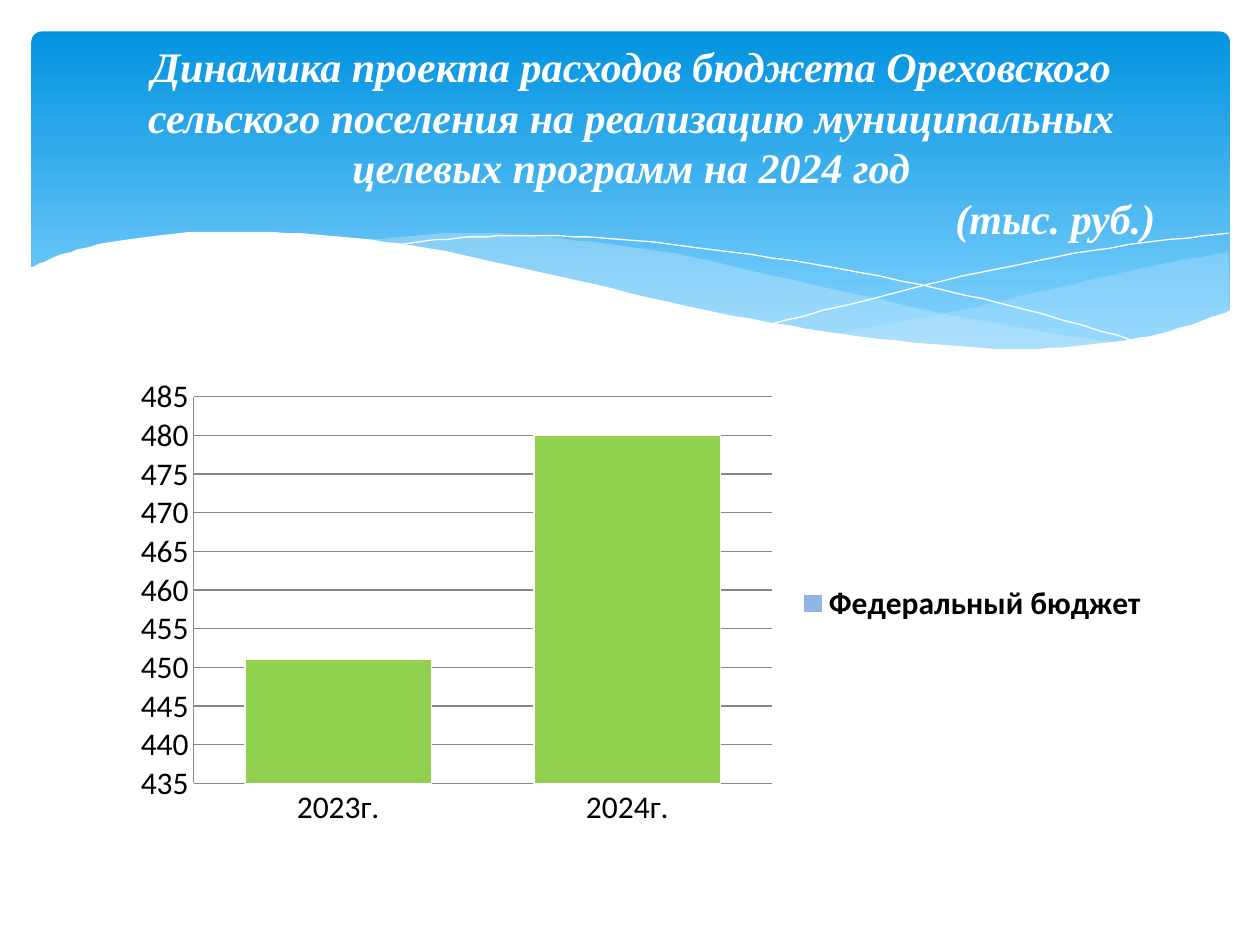
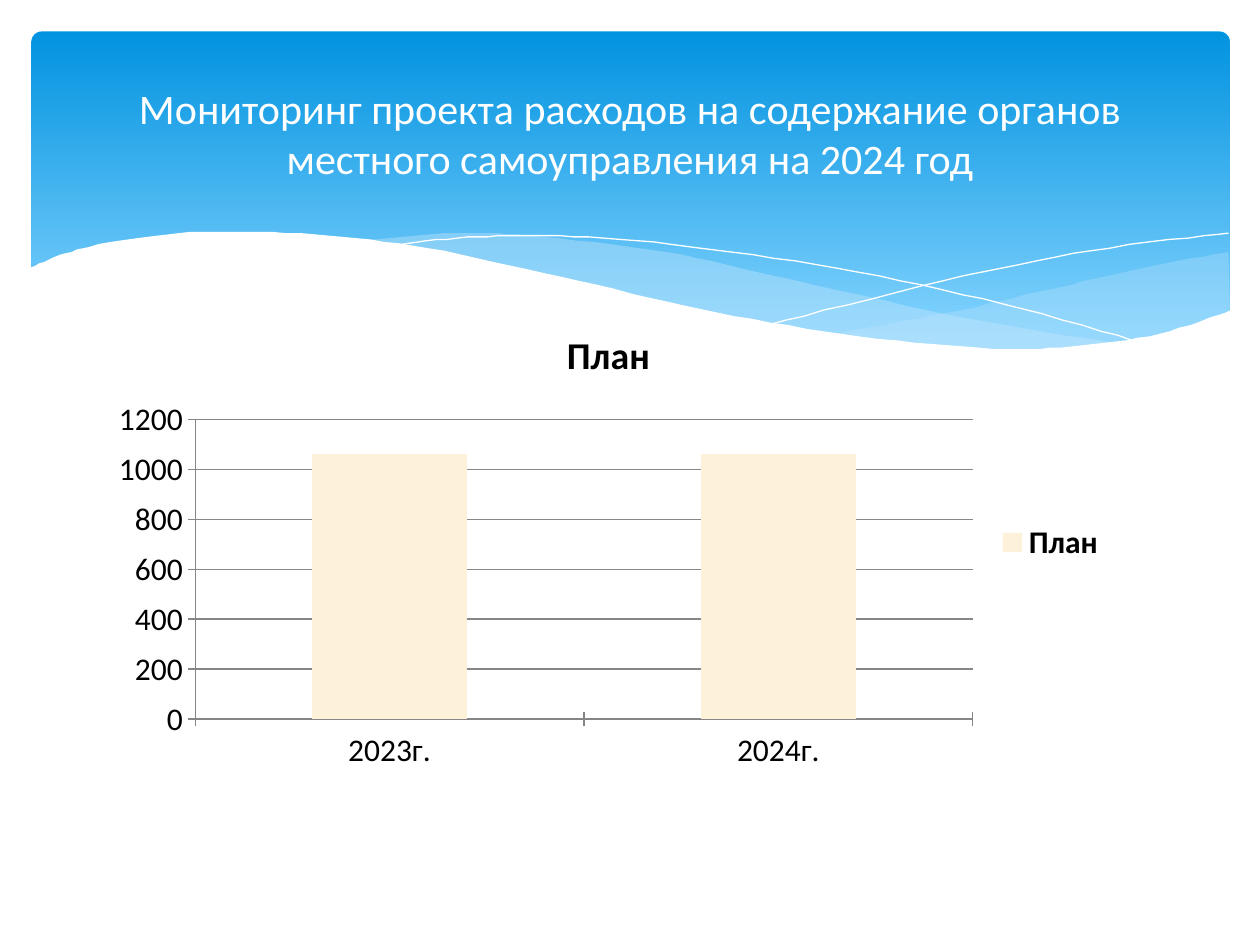
from dataclasses import dataclass
from typing import Optional

from lxml import etree
from pptx import Presentation
from pptx.chart.data import CategoryChartData
from pptx.dml.color import RGBColor
from pptx.enum.chart import XL_CHART_TYPE, XL_LEGEND_POSITION, XL_TICK_MARK
from pptx.enum.shapes import MSO_SHAPE
from pptx.enum.text import MSO_ANCHOR, PP_ALIGN
from pptx.oxml.ns import qn
from pptx.util import Pt

PX = 9144  # EMU per px, 100 px to the inch
STACKED, CLUSTERED = XL_CHART_TYPE.COLUMN_STACKED, XL_CHART_TYPE.COLUMN_CLUSTERED
NO_TICK, CROSS_TICK = XL_TICK_MARK.NONE, XL_TICK_MARK.CROSS
LEGEND_RIGHT = XL_LEGEND_POSITION.RIGHT
ROUNDED = MSO_SHAPE.ROUNDED_RECTANGLE
MIDDLE = MSO_ANCHOR.MIDDLE
CENTER, RIGHT = PP_ALIGN.CENTER, PP_ALIGN.RIGHT
CURVE_STEPS = 8  # straight pieces between two knots of a wave

COLORS = {
    "white": "FFFFFF", "black": "000000", "grid": "868686",
    "band_top": "0293E0", "band_bottom": "83D3FE", "wave": "C6E7FC",
    "green": "92D050", "cyan": "00B0F0", "blue": "8FB5E5", "cream": "FDF2D9",
}
BODY_FONT, SERIF_FONT = "Calibri", "Times New Roman"

Box = tuple[int, int, int, int]
Knots = tuple[tuple[int, int], ...]


@dataclass(frozen=True)
class Wave:
    edges: tuple[Knots, ...]  # each edge is smooth, corners lie between edges
    opacity: Optional[int] = None  # percent; None means a bare white line


@dataclass(frozen=True)
class Title:
    box: Box
    lines: tuple[tuple[str, PP_ALIGN], ...]
    font: str
    emphasis: bool = False


@dataclass(frozen=True)
class Series:
    name: str
    values: tuple[int, ...]
    color: str


@dataclass(frozen=True)
class BudgetChart:
    kind: XL_CHART_TYPE
    box: Box
    plot: Box
    series: tuple[Series, ...]
    scale: tuple[int, int, int]  # minimum, maximum, step
    gap: int
    tick: XL_TICK_MARK
    heading: str = ""
    outline: bool = False
    hidden_in_legend: tuple[int, ...] = ()


# Waves along the lower edge of the band, from back to front
WAVES = (
    Wave((((975, 200), (906, 213), (832, 230), (753, 248), (661, 265)),
          ((661, 265), (745, 275), (814, 278), (889, 272), (942, 259), (976, 247))),
         29),
    Wave((((893, 273), (775, 254), (629, 222), (528, 200), (420, 187), (361, 185),
           (286, 191)),
          ((286, 191), (383, 207), (491, 232), (618, 258), (722, 274), (796, 278),
           (893, 273))),
         40),
    Wave((((309, 195), (363, 189), (433, 187), (533, 194), (665, 213), (795, 241),
           (907, 272)),)),
    Wave((((613, 257), (748, 223), (866, 199), (975, 185)),)),
    Wave((((977, 246), (920, 265), (850, 275), (778, 276), (668, 265), (555, 245),
           (447, 220), (340, 197), (250, 186), (161, 184), (95, 191), (52, 201),
           (23, 213)),
          ((23, 329), (977, 329))),
         100),
)

YEARS = ("2023г.", "2024г.")

SLIDES = (
    (
        BudgetChart(
            STACKED, (95, 293, 827, 372), (154, 315, 459, 307),
            (Series("Series 1", (451, 480), "green"),
             Series("Series 2", (0, 0), "cyan"),
             Series("Федеральный бюджет", (0, 0), "blue")),
            (435, 485, 5), 55, NO_TICK, outline=True, hidden_in_legend=(0, 1)),
        Title(
            (51, 36, 900, 153),
            (("Динамика проекта расходов бюджета Ореховского сельского поселения "
              "на реализацию муниципальных целевых программ на 2024 год", CENTER),
             ("(тыс. руб.)", RIGHT)),
            SERIF_FONT, emphasis=True),
    ),
    (
        BudgetChart(
            CLUSTERED, (78, 242, 810, 377), (155, 333, 617, 238),
            (Series("План", (1060, 1060), "cream"),),
            (0, 1200, 200), 150, CROSS_TICK, heading="План"),
        Title(
            (50, 37, 900, 137),
            (("Мониторинг проекта расходов на содержание органов местного "
              "самоуправления на 2024 год", CENTER),),
            BODY_FONT),
    ),
)


def rgb(name: str) -> RGBColor:
    return RGBColor.from_string(COLORS[name])


def emu(box: Box) -> list[int]:
    return [length * PX for length in box]


def smooth(knots: Knots) -> list[tuple[float, float]]:
    """Run a Catmull-Rom curve through the knots."""
    padded = (knots[0], *knots, knots[-1])
    points = [knots[0]]
    for quad in zip(padded, padded[1:], padded[2:], padded[3:]):
        for step in range(1, CURVE_STEPS + 1):
            t = step / CURVE_STEPS
            points.append(tuple(
                b + t * (c - a) / 2 + t**2 * (2 * a - 5 * b + 4 * c - d) / 2
                + t**3 * (3 * b - a - 3 * c + d) / 2
                for a, b, c, d in zip(*quad)))
    return points


def draw_band(slide) -> None:
    band = slide.shapes.add_shape(ROUNDED, *emu((25, 25, 951, 270)))
    band.adjustments[0] = 0.03
    band.shadow.inherit = False
    band.line.fill.background()
    band.fill.gradient()
    band.fill.gradient_angle = 270
    top, bottom = band.fill.gradient_stops
    top.color.rgb, top.position = rgb("band_top"), 0
    bottom.color.rgb, bottom.position = rgb("band_bottom"), 0.9


def draw_wave(slide, wave: Wave) -> None:
    filled = wave.opacity is not None
    points = [point for edge in wave.edges for point in smooth(edge)]
    builder = slide.shapes.build_freeform(*points[0], scale=PX)
    builder.add_line_segments(points[1:], close=filled)
    curve = builder.convert_to_shape()
    curve.shadow.inherit = False
    if not filled:
        curve.fill.background()
        curve.line.color.rgb = rgb("white")
        curve.line.width = 0
        return
    curve.line.fill.background()
    curve.fill.solid()
    curve.fill.fore_color.rgb = rgb("white" if wave.opacity == 100 else "wave")
    if wave.opacity < 100:
        tint = curve.element.find(".//" + qn("a:srgbClr"))
        etree.SubElement(tint, qn("a:alpha"), val=str(wave.opacity * 1000))


def place_plot(chart, box: Box, plot: Box) -> None:
    """Fix the inner plot area as fractions of the chart frame."""
    left, top, width, height = box
    fractions = {
        "x": (plot[0] - left) / width, "y": (plot[1] - top) / height,
        "w": plot[2] / width, "h": plot[3] / height,
    }
    area = chart.element.find(".//" + qn("c:plotArea"))
    for old_layout in area.findall(qn("c:layout")):
        area.remove(old_layout)
    layout = etree.Element(qn("c:layout"))
    manual = etree.SubElement(layout, qn("c:manualLayout"))
    etree.SubElement(manual, qn("c:layoutTarget"), val="inner")
    for side in "xy":
        etree.SubElement(manual, qn(f"c:{side}Mode"), val="edge")
    for side, fraction in fractions.items():
        etree.SubElement(manual, qn(f"c:{side}"), val=f"{fraction:.3f}")
    area.insert(0, layout)


def draw_legend(chart, hidden: tuple[int, ...]) -> None:
    chart.has_legend = True
    chart.legend.position = LEGEND_RIGHT
    chart.legend.include_in_layout = False
    chart.legend.font.bold = True
    chart.legend.font.size = Pt(18)
    position = chart.element.find(".//" + qn("c:legendPos"))
    for index in reversed(hidden):
        entry = etree.Element(qn("c:legendEntry"))
        etree.SubElement(entry, qn("c:idx"), val=str(index))
        etree.SubElement(entry, qn("c:delete"), val="1")
        position.addnext(entry)


def draw_chart(slide, budget: BudgetChart) -> None:
    data = CategoryChartData()
    data.categories = YEARS
    for series in budget.series:
        data.add_series(series.name, series.values)
    chart = slide.shapes.add_chart(budget.kind, *emu(budget.box), data).chart
    chart.font.size = Pt(18)
    chart.font.name = BODY_FONT
    chart.font.color.rgb = rgb("black")

    # Heading
    chart.has_title = bool(budget.heading)
    if budget.heading:
        heading = chart.chart_title.text_frame.paragraphs[0].add_run()
        heading.text = budget.heading
        heading.font.size = Pt(21.6)
        heading.font.bold = True

    # Columns
    columns = chart.plots[0]
    columns.vary_by_categories = False
    columns.gap_width = budget.gap
    if budget.kind == STACKED:
        columns.overlap = 100
    for drawn, series in zip(columns.series, budget.series):
        drawn.format.fill.solid()
        drawn.format.fill.fore_color.rgb = rgb(series.color)
        if budget.outline:
            drawn.format.line.color.rgb = rgb("white")
            drawn.format.line.width = Pt(1)

    # Axes
    amounts = chart.value_axis
    amounts.minimum_scale, amounts.maximum_scale, amounts.major_unit = budget.scale
    amounts.has_major_gridlines = True
    amounts.major_gridlines.format.line.color.rgb = rgb("grid")
    for axis in (chart.category_axis, amounts):
        axis.major_tick_mark = budget.tick
        axis.minor_tick_mark = NO_TICK
        axis.format.line.color.rgb = rgb("grid")

    draw_legend(chart, budget.hidden_in_legend)
    place_plot(chart, budget.box, budget.plot)


def draw_title(slide, title: Title) -> None:
    frame = slide.shapes.add_textbox(*emu(title.box)).text_frame
    frame.word_wrap = True
    frame.vertical_anchor = MIDDLE
    frame.margin_left = frame.margin_right = 34 * PX
    for index, (text, alignment) in enumerate(title.lines):
        paragraph = frame.add_paragraph() if index else frame.paragraphs[0]
        paragraph.alignment = alignment
        paragraph.line_spacing = Pt(28.8)
        run = paragraph.add_run()
        run.text = text
        run.font.name = title.font
        run.font.size = Pt(24)
        run.font.bold = run.font.italic = title.emphasis
        run.font.color.rgb = rgb("white")


def main() -> None:
    deck = Presentation()
    deck.slide_width, deck.slide_height = 1000 * PX, 750 * PX
    for budget, title in SLIDES:
        slide = deck.slides.add_slide(deck.slide_layouts[6])
        draw_band(slide)
        for wave in WAVES:
            draw_wave(slide, wave)
        draw_chart(slide, budget)
        draw_title(slide, title)
    deck.save("out.pptx")


if __name__ == "__main__":
    main()
